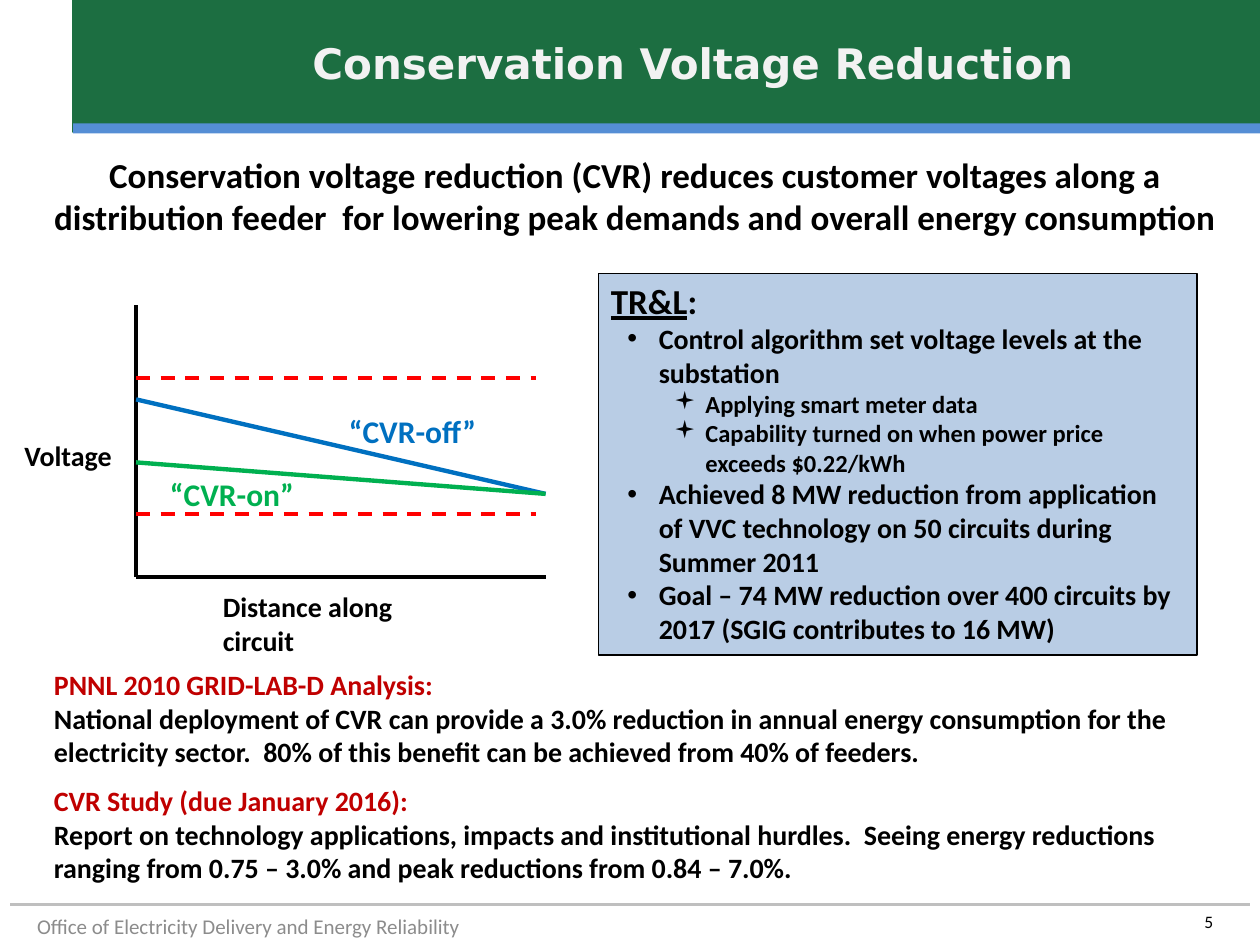
from lxml import etree
from pptx import Presentation
from pptx.dml.color import RGBColor
from pptx.enum import dml, shapes as kinds, text as tx
from pptx.oxml import ns
from pptx.util import Inches, Pt

GREEN = RGBColor(0x1C, 0x6E, 0x41)
STRIPE = RGBColor(0x55, 0x8E, 0xD5)
GRAY = RGBColor(0x8C, 0x8C, 0x8C)
RULE = RGBColor(0xBF, 0xBF, 0xBF)
OFFWHITE = RGBColor(0xF2, 0xF2, 0xF2)
BLACK = RGBColor(0, 0, 0)
CRIMSON = RGBColor(0xC0, 0, 0)
RED = RGBColor(0xFF, 0, 0)
BLUE = RGBColor(0, 0x70, 0xC0)
LEAF = RGBColor(0, 0xB0, 0x50)
PANEL = RGBColor(0xB9, 0xCD, 0xE5)

TITLE = "Conservation Voltage Reduction"
LEAD = ("Conservation voltage reduction (CVR) reduces customer voltages along a "
        "distribution feeder  for lowering peak demands and overall energy consumption")
FOOTER = "Office of Electricity Delivery and Energy Reliability"
PAGE = "5"
UTILITY = "TR&L"
RESULTS = [
    (0, "Control algorithm set voltage levels at the substation"),
    (1, "Applying smart meter data"),
    (1, "Capability turned on when power price exceeds $0.22/kWh"),
    (0, "Achieved 8 MW reduction from application of VVC technology on 50 circuits "
        "during Summer 2011"),
    (0, "Goal – 74 MW reduction over 400 circuits by 2017 (SGIG contributes to 16 MW)"),
]
LEVELS = [("•", "Arial", 0.38, 16), ("▪", "Wingdings", 0.75, 14)]
STUDIES = [
    (5.25, "PNNL 2010 GRID-LAB-D Analysis:",
     "National deployment of CVR can provide a 3.0% reduction in annual energy "
     "consumption for the electricity sector.  80% of this benefit can be achieved "
     "from 40% of feeders."),
    (6.17, "CVR Study (due January 2016):",
     "Report on technology applications, impacts and institutional hurdles.  Seeing "
     "energy reductions ranging from 0.75 – 3.0% and peak reductions from 0.84 – 7.0%."),
]

AXIS_X, AXIS_Y, FAR_X, LIMIT_X = 1.08, 4.58, 4.33, 4.25
PLOT_LINES = [
    ((AXIS_X, AXIS_Y), (FAR_X, AXIS_Y), BLACK, 2.25, False),
    ((AXIS_X, AXIS_Y), (AXIS_X, 2.42), BLACK, 2.25, False),
    ((AXIS_X, 3.17), (FAR_X, 3.92), BLUE, 2.5, False),
    ((AXIS_X, 3.67), (FAR_X, 3.92), LEAF, 2.5, False),
    ((AXIS_X, 4.08), (LIMIT_X, 4.08), RED, 2, True),
    ((AXIS_X, 3), (LIMIT_X, 3), RED, 2, True),
]
PLOT_LABELS = [
    ("“CVR-on”", (1.25, 3.67, 1.25, 0.42), 18, LEAF, False, tx.PP_ALIGN.LEFT),
    ("Voltage", (0, 3.38, 1.08, 0.46), 16, BLACK, True, tx.PP_ALIGN.CENTER),
    ("Distance along circuit", (1.67, 4.58, 2.08, 0.33), 16, BLACK, False, tx.PP_ALIGN.LEFT),
    ("“CVR-off”", (2.67, 3.17, 1.25, 0.42), 18, BLUE, True, tx.PP_ALIGN.LEFT),
]


def place(part, box):
    part.left, part.top, part.width, part.height = map(Inches, box)


def style(paragraph, size, color, bold=True, face="Calibri", align=tx.PP_ALIGN.LEFT):
    paragraph.alignment = align
    font = paragraph.font
    font.name, font.size, font.bold = face, Pt(size), bold
    font.color.rgb = color


def add_text(parent, box, lines, wrap=True, inset=0.05, **look):
    frame = parent.add_textbox(*map(Inches, box)).text_frame
    frame.word_wrap = wrap
    frame.margin_top = frame.margin_bottom = Inches(inset)
    for i, (words, size, color) in enumerate(lines):
        paragraph = frame.add_paragraph() if i else frame.paragraphs[0]
        paragraph.text = words
        style(paragraph, size, color, **look)


def add_line(parent, start, end, color, width, dashed=False):
    connector = parent.add_connector(kinds.MSO_CONNECTOR.STRAIGHT,
                                     *map(Inches, start + end))
    connector.line.color.rgb = color
    connector.line.width = Pt(width)
    if dashed:
        connector.line.dash_style = dml.MSO_LINE.DASH
    etree.SubElement(connector.element.spPr, ns.qn("a:effectLst"))


def add_box(parent, box, fill, line=None, width=1):
    rect = parent.add_shape(kinds.MSO_SHAPE.RECTANGLE, *map(Inches, box))
    rect.shadow.inherit = False
    rect.fill.solid()
    rect.fill.fore_color.rgb = fill
    if line is None:
        rect.line.fill.background()
    else:
        rect.line.color.rgb = line
        rect.line.width = Pt(width)
    return rect


def set_bullet(paragraph, char, face, margin):
    props = paragraph._p.get_or_add_pPr()
    props.set("marL", str(Inches(margin)))
    props.set("indent", str(Inches(-0.25)))
    etree.SubElement(props, ns.qn("a:buFont")).set("typeface", face)
    etree.SubElement(props, ns.qn("a:buChar")).set("char", char)


def add_results(parent):
    frame = add_box(parent, (4.75, 2.17, 4.75, 3.03), PANEL, BLACK, 0.75).text_frame
    frame.word_wrap = True
    frame.vertical_anchor = tx.MSO_ANCHOR.TOP
    heading = frame.paragraphs[0]
    name = heading.add_run()
    name.text = UTILITY
    name.font.underline = True
    heading.add_run().text = ":"
    style(heading, 20, BLACK)
    for level, words in RESULTS:
        char, face, margin, size = LEVELS[level]
        paragraph = frame.add_paragraph()
        paragraph.text = words
        paragraph.level = level
        set_bullet(paragraph, char, face, margin)
        style(paragraph, size, BLACK)


def main():
    deck = Presentation()
    deck.slide_width, deck.slide_height = Inches(10), Inches(7.5)
    slide = deck.slides.add_slide(deck.slide_layouts[1])
    parts = slide.shapes
    title, lead = parts.title, slide.placeholders[1]

    add_box(parts, (0.58, 0, 9.42, 1.05), GREEN, GREEN)
    add_box(parts, (0.58, 0.98, 9.42, 0.08), STRIPE)
    add_text(parts, (0, 7.2, 3.75, 0.3), [(FOOTER, 12, GRAY)],
             bold=False, align=tx.PP_ALIGN.RIGHT)
    add_line(parts, (0.08, 7.18), (9.92, 7.18), RULE, 1.75)

    for holder in (title, lead):
        parts.element.append(holder.element)
    place(title, (1.04, 0, 8.92, 1))
    title.text_frame.text = TITLE
    title.text_frame.vertical_anchor = tx.MSO_ANCHOR.MIDDLE
    style(title.text_frame.paragraphs[0], 24, OFFWHITE,
          face="DejaVu Sans", align=tx.PP_ALIGN.CENTER)

    place(lead, (0.25, 1.17, 9.58, 0.83))
    lead.text_frame.text = LEAD
    message = lead.text_frame.paragraphs[0]
    message.space_before = Pt(0)
    props = message._p.get_or_add_pPr()
    props.set("marL", "0")
    props.set("indent", "0")
    etree.SubElement(props, ns.qn("a:buNone"))
    style(message, 20, BLACK, align=tx.PP_ALIGN.CENTER)

    add_text(parts, (9.46, 7.18, 0.4, 0.4), [(PAGE, 10, BLACK)], bold=False)

    plot = parts.add_group_shape().shapes
    for start, end, color, width, dashed in PLOT_LINES:
        add_line(plot, start, end, color, width, dashed)
    for words, box, size, color, wrap, align in PLOT_LABELS:
        add_text(plot, box, [(words, size, color)], wrap, 0.1, align=align)

    add_results(parts)
    for top, heading, finding in STUDIES:
        add_text(parts, (0.33, top, 9.17, 0.91),
                 [(heading, 16, CRIMSON), (finding, 16, BLACK)])
    deck.save("out.pptx")


if __name__ == "__main__":
    main()
